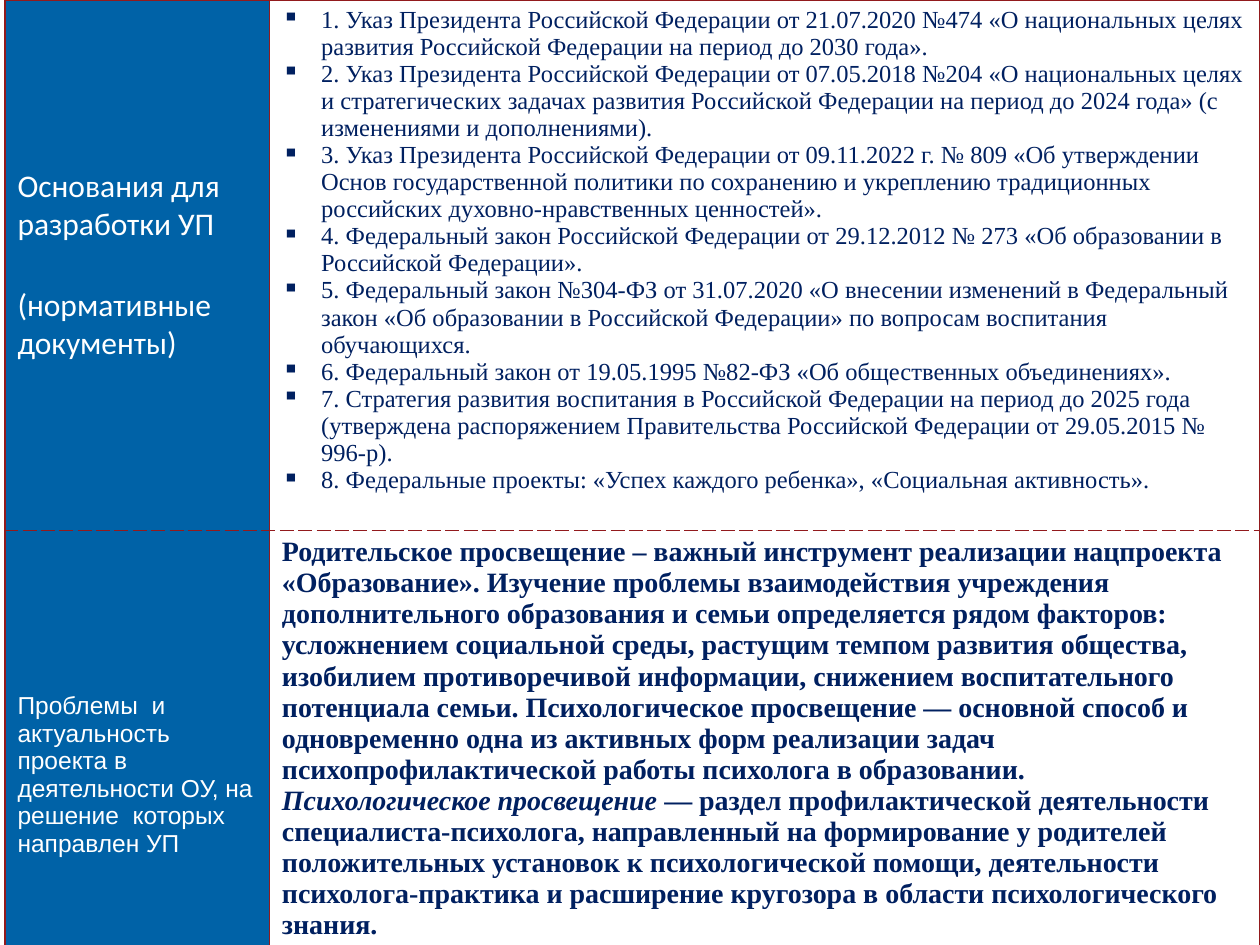
"""Build the slide on the legal grounds and relevance of the project."""
from dataclasses import dataclass, field

import lxml.etree
import pptx
import pptx.dml.color
import pptx.enum.text
import pptx.oxml.ns
import pptx.table
import pptx.text.text
import pptx.util

Cm = pptx.util.Cm
RGB = pptx.dml.color.RGBColor
qn = pptx.oxml.ns.qn
MIDDLE = pptx.enum.text.MSO_ANCHOR.MIDDLE
TOP = pptx.enum.text.MSO_ANCHOR.TOP


@dataclass(frozen=True)
class Theme:
    label_fill: str = "0062A7"
    label_text: str = "FFFFFF"
    body_fill: str = "FFFFFF"
    body_text: str = "002060"
    border: str = "921A1D"
    border_width: float = 1
    heading_size: float = 18
    list_size: float = 14
    emphasis_size: float = 16
    heading_font: str = "Calibri"
    label_font: str = "Arial"
    body_font: str = "Times New Roman"


THEME = Theme()


@dataclass(frozen=True)
class Phrase:
    text: str
    italic: bool = False


@dataclass(frozen=True)
class CellStyle:
    font: str
    size: float
    color: str = THEME.body_text
    fill: str = THEME.body_fill
    anchor: pptx.enum.text.MSO_ANCHOR = TOP
    bold: bool = False
    bulleted: bool = False
    spacing: float = 0


@dataclass(frozen=True)
class Block:
    style: CellStyle
    paragraphs: list[list[Phrase]] = field(default_factory=list)


def plain(*texts: str) -> list[list[Phrase]]:
    """Turn each text into a paragraph of one phrase."""
    return [[Phrase(text)] for text in texts]


GROUNDS_LABEL = Block(
    CellStyle(THEME.heading_font, THEME.heading_size, THEME.label_text,
              THEME.label_fill, MIDDLE, spacing=12),
    plain("Основания для разработки УП", "(нормативные документы)"),
)
GROUNDS = Block(
    CellStyle(THEME.body_font, THEME.list_size, bulleted=True),
    plain(
        "1. Указ Президента Российской Федерации от 21.07.2020 №474 «О национальных целях "
        "развития Российской Федерации на период до 2030 года».",
        "2. Указ Президента Российской Федерации от 07.05.2018 №204 «О национальных целях "
        "и стратегических задачах развития Российской Федерации на период до 2024 года» "
        "(с изменениями и дополнениями).",
        "3. Указ Президента Российской Федерации от 09.11.2022 г. № 809 «Об утверждении "
        "Основ государственной политики по сохранению и укреплению традиционных "
        "российских духовно-нравственных ценностей».",
        "4. Федеральный закон Российской Федерации от 29.12.2012 № 273 «Об образовании в "
        "Российской Федерации».",
        "5. Федеральный закон №304-ФЗ от 31.07.2020 «О внесении изменений в Федеральный "
        "закон «Об образовании в Российской Федерации» по вопросам воспитания обучающихся.",
        "6. Федеральный закон от 19.05.1995 №82-ФЗ «Об общественных объединениях».",
        "7. Стратегия развития воспитания в Российской Федерации на период до 2025 года "
        "(утверждена распоряжением Правительства Российской Федерации от 29.05.2015 № 996-р).",
        "8. Федеральные проекты: «Успех каждого ребенка», «Социальная активность».",
    ),
)
RELEVANCE_LABEL = Block(
    CellStyle(THEME.label_font, THEME.list_size, THEME.label_text,
              THEME.label_fill, MIDDLE),
    plain("Проблемы  и актуальность проекта в деятельности ОУ, на решение  которых направлен УП"),
)
RELEVANCE = Block(
    CellStyle(THEME.body_font, THEME.emphasis_size, bold=True),
    plain(
        "Родительское просвещение – важный инструмент реализации нацпроекта «Образование». "
        "Изучение проблемы взаимодействия учреждения дополнительного образования и семьи "
        "определяется рядом факторов: усложнением социальной среды, растущим темпом развития "
        "общества, изобилием противоречивой информации, снижением воспитательного потенциала "
        "семьи. Психологическое просвещение — основной способ и одновременно одна из активных "
        "форм реализации задач психопрофилактической работы психолога в образовании."
    ) + [[
        Phrase("Психологическое просвещение ", italic=True),
        Phrase("— раздел профилактической деятельности специалиста-психолога, направленный на "
               "формирование у родителей положительных установок к психологической помощи, "
               "деятельности психолога-практика и расширение кругозора в области "
               "психологического знания."),
    ]],
)
ROWS = [(GROUNDS_LABEL, GROUNDS), (RELEVANCE_LABEL, RELEVANCE)]
COLUMN_WIDTHS = [5.33, 19.96]
ROW_HEIGHTS = [10.69, 9.86]


def add_bullet(paragraph: pptx.text.text._Paragraph) -> None:
    """Give a paragraph a square bullet with a hanging indent."""
    properties = paragraph._p.get_or_add_pPr()
    properties.set("marL", str(Cm(0.79)))
    properties.set("indent", str(-Cm(0.79)))
    lxml.etree.SubElement(properties, qn("a:buChar")).set("char", "▪")


def add_borders(cell: pptx.table._Cell, dashed_side: str) -> None:
    """Outline a cell, with a dashed line on one side."""
    properties = cell._tc.get_or_add_tcPr()
    for position, side in enumerate("LRTB"):
        line = lxml.etree.Element(qn(f"a:ln{side}"))
        line.set("w", str(pptx.util.Pt(THEME.border_width)))
        fill = lxml.etree.SubElement(line, qn("a:solidFill"))
        lxml.etree.SubElement(fill, qn("a:srgbClr")).set("val", THEME.border)
        dash = "sysDash" if side == dashed_side else "solid"
        lxml.etree.SubElement(line, qn("a:prstDash")).set("val", dash)
        properties.insert(position, line)


def fill_cell(cell: pptx.table._Cell, block: Block) -> None:
    """Write a block into a cell in its style."""
    style = block.style
    cell.fill.solid()
    cell.fill.fore_color.rgb = RGB.from_string(style.fill)
    cell.vertical_anchor = style.anchor
    frame = cell.text_frame
    for index, phrases in enumerate(block.paragraphs):
        paragraph = frame.add_paragraph() if index else frame.paragraphs[0]
        paragraph.space_before = paragraph.space_after = pptx.util.Pt(style.spacing)
        if style.bulleted:
            add_bullet(paragraph)
        font = paragraph.font
        font.name, font.size, font.bold = style.font, pptx.util.Pt(style.size), style.bold
        font.color.rgb = RGB.from_string(style.color)
        for phrase in phrases:
            run = paragraph.add_run()
            run.text = phrase.text
            if phrase.italic:
                run.font.italic = True


def main() -> None:
    """Build and save the presentation."""
    presentation = pptx.Presentation()
    presentation.slide_width, presentation.slide_height = Cm(25.4), Cm(19.05)
    slide = presentation.slides.add_slide(presentation.slide_layouts[6])
    table = slide.shapes.add_table(
        len(ROWS), len(COLUMN_WIDTHS), Cm(0.1), Cm(0),
        Cm(sum(COLUMN_WIDTHS)), Cm(sum(ROW_HEIGHTS)),
    ).table
    table.first_row = table.horz_banding = False
    for column, width in zip(table.columns, COLUMN_WIDTHS):
        column.width = Cm(width)
    for row, height, blocks, dashed_side in zip(table.rows, ROW_HEIGHTS, ROWS, "BT"):
        row.height = Cm(height)
        for cell, block in zip(row.cells, blocks):
            fill_cell(cell, block)
            add_borders(cell, dashed_side)
    presentation.save("out.pptx")


if __name__ == "__main__":
    main()
